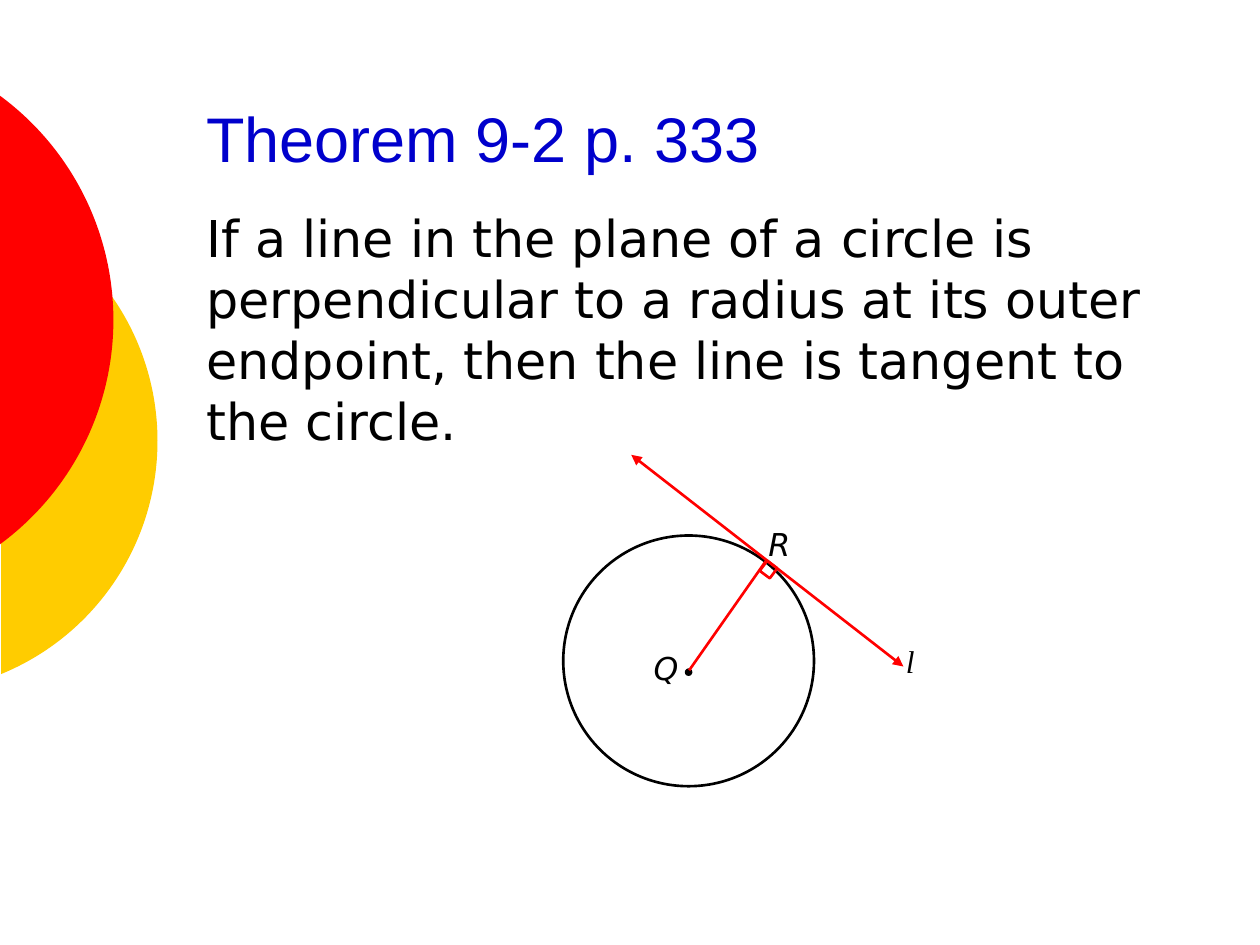
import math
from dataclasses import dataclass

import lxml.etree
import pptx
import pptx.dml.color
import pptx.enum.shapes
import pptx.enum.text
import pptx.oxml.ns
import pptx.util

PX = 9144
SHAPES = pptx.enum.shapes.MSO_SHAPE
ANCHORS = pptx.enum.text.MSO_ANCHOR


def color(value):
    return pptx.dml.color.RGBColor.from_string(value)


@dataclass(frozen=True)
class Theme:
    white = color("FFFFFF")
    black = color("000000")
    red = color("FF0000")
    yellow = color("FFCC00")
    blue = color("0000CC")
    title_font = "Arial"
    body_font = "DejaVu Sans"
    line_font = "Times New Roman"
    title_size = 36
    body_size = 29
    label_size = 18
    thin = 0.75
    stroke = 1.5


THEME = Theme()


def emu(*lengths):
    return [round(length * PX) for length in lengths]


def add_element(parent, tag, **attributes):
    return lxml.etree.SubElement(parent, pptx.oxml.ns.qn(tag), **attributes)


def style_shape(shape, fill=None, line=None, width=THEME.stroke):
    shape.shadow.inherit = False
    if fill is None:
        shape.fill.background()
    else:
        shape.fill.solid()
        shape.fill.fore_color.rgb = fill
    if line is None:
        shape.line.fill.background()
    else:
        shape.line.color.rgb = line
        shape.line.width = pptx.util.Pt(width)


def add_text(shapes, box, text, font, size, text_color, anchor=ANCHORS.TOP,
             italic=False, space_before=0, wrap=True):
    shape = shapes.add_textbox(*emu(*box))
    frame = shape.text_frame
    frame.word_wrap = wrap
    frame.vertical_anchor = anchor
    paragraph = frame.paragraphs[0]
    paragraph.text = text
    paragraph.space_before = pptx.util.Pt(space_before)
    paragraph.font.name = font
    paragraph.font.size = pptx.util.Pt(size)
    paragraph.font.italic = italic
    paragraph.font.color.rgb = text_color
    return shape


def add_line(shapes, start, end, arrows=False):
    connector = shapes.add_connector(
        pptx.enum.shapes.MSO_CONNECTOR.STRAIGHT, *emu(*start, *end))
    connector.line.color.rgb = THEME.red
    connector.line.width = pptx.util.Pt(THEME.stroke)
    if arrows:
        line = connector.line._get_or_add_ln()
        for tag in ("a:headEnd", "a:tailEnd"):
            add_element(line, tag, type="triangle")
    add_element(connector._element.spPr, "a:effectLst")


def add_edge_disc(slide, left, top, diameter, edge, fill):
    radius = diameter / 2
    limit = math.acos((edge - left - radius) / radius)
    handle = 4 / 3 * math.tan(limit / 4)

    def on_circle(angle, pull=0):
        return emu(radius * (1 + math.cos(angle) - pull * math.sin(angle)),
                   radius * (1 + math.sin(angle) + pull * math.cos(angle)))

    start, middle, end = (on_circle(angle) for angle in (-limit, 0, limit))
    builder = slide.shapes.build_freeform(*start)
    builder.add_line_segments([middle, end], close=True)
    shape = builder.convert_to_shape()
    shape.left, shape.top, shape.width, shape.height = emu(
        left, top, diameter, diameter)
    style_shape(shape, fill)

    outline = shape._element.spPr.find(".//" + pptx.oxml.ns.qn("a:path"))
    for child in list(outline):
        outline.remove(child)
    for side in ("w", "h"):
        outline.set(side, str(emu(diameter)[0]))
    segments = (
        ("a:moveTo", [start]),
        ("a:cubicBezTo", [on_circle(-limit, handle), on_circle(0, -handle), middle]),
        ("a:cubicBezTo", [on_circle(0, handle), on_circle(limit, -handle), end]),
        ("a:close", []),
    )
    for tag, points in segments:
        segment = add_element(outline, tag)
        for x, y in points:
            add_element(segment, "a:pt", x=str(x), y=str(y))


def add_decoration(slide):
    add_edge_disc(slide, -275, 150, 400, 1, THEME.yellow)
    add_edge_disc(slide, -352, 33, 442, -1, THEME.red)


def add_theorem(slide, box):
    left, top, width, height = box
    add_text(slide.shapes, (left, top, 740, 76), "Theorem 9-2 p. 333",
             THEME.title_font, THEME.title_size, THEME.blue, ANCHORS.BOTTOM)
    statement = add_text(
        slide.shapes, (left, top + 91, width, height - 91),
        "If a line in the plane of a circle is perpendicular to a radius at "
        "its outer endpoint, then the line is tangent to the circle.",
        THEME.body_font, THEME.body_size, THEME.black,
        space_before=THEME.body_size * 0.2)
    statement.fill.solid()
    statement.fill.fore_color.rgb = THEME.white


def add_tangent_diagram(slide, left, top):
    shapes = slide.shapes.add_group_shape().shapes

    def at(x, y):
        return left + x, top + y

    center = shapes.add_shape(SHAPES.OVAL, *emu(*at(97, 170), 5, 5))
    style_shape(center, THEME.black, THEME.black, THEME.thin)
    circle = shapes.add_shape(SHAPES.OVAL, *emu(*at(0, 64), 199, 199))
    style_shape(circle, line=THEME.black)
    add_line(shapes, at(54, 0), at(270, 168), arrows=True)
    add_line(shapes, at(100, 171), at(161, 84))

    labels = (
        ("Q", 62, 149, 33, THEME.body_font),
        ("R", 153, 51, 33, THEME.body_font),
        ("l", 262, 144, 39, THEME.line_font),
    )
    for text, x, y, width, font in labels:
        add_text(shapes, (*at(x, y), width, 40), text, font,
                 THEME.label_size, THEME.black, italic=True,
                 space_before=THEME.label_size * 0.5, wrap=False)

    right_angle = shapes.add_shape(SHAPES.RECTANGLE, *emu(*at(158, 86), 10, 10))
    style_shape(right_angle, line=THEME.red)
    right_angle.rotation = 306.7


def main():
    presentation = pptx.Presentation()
    presentation.slide_width, presentation.slide_height = emu(1000, 750)
    slide = presentation.slides.add_slide(presentation.slide_layouts[6])
    add_decoration(slide)
    add_theorem(slide, (154, 68, 809, 301))
    add_tangent_diagram(slide, 447, 361)
    presentation.save("out.pptx")


if __name__ == "__main__":
    main()
